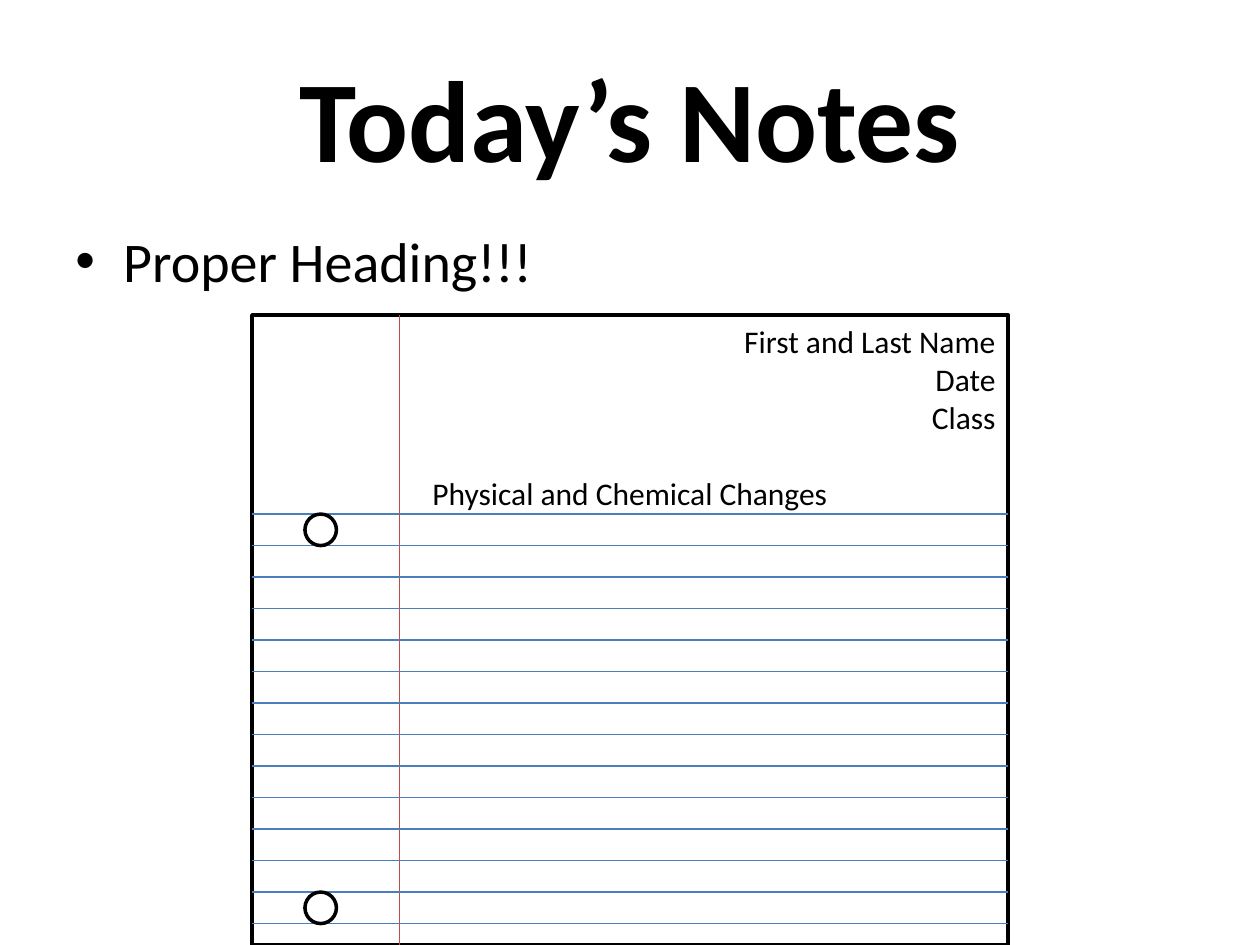
import pptx
import pptx.util
import pptx.dml.color
import pptx.enum.shapes
import pptx.enum.text
import pptx.oxml
import pptx.oxml.ns

Inches = pptx.util.Inches
Pt = pptx.util.Pt
Align = pptx.enum.text.PP_ALIGN
Anchor = pptx.enum.text.MSO_ANCHOR
Kind = pptx.enum.shapes.MSO_SHAPE


def paint(fill, color):
    fill.solid()
    fill.fore_color.rgb = pptx.dml.color.RGBColor.from_string(color)


def write(frame, text, size=18, bold=False, align=Align.LEFT, before=0):
    """Fill the first paragraph if it is empty, or else add one."""
    para = frame.paragraphs[-1]
    if para.runs:
        para = frame.add_paragraph()
    para.alignment = align
    para.space_before = Pt(before)
    run = para.add_run()
    run.text = text
    run.font.name = "Calibri"
    run.font.size = Pt(size)
    run.font.bold = bold
    paint(run.font.fill, "000000")
    return para


deck = pptx.Presentation()
deck.slide_width = Inches(10)
deck.slide_height = Inches(7.5)
slide = deck.slides.add_slide(deck.slide_layouts[6])
shapes = slide.shapes
paint(slide.background.fill, "FFFFFF")

# Title
title = shapes.add_textbox(Inches(0.5), Inches(0.3), Inches(9), Inches(1.25)).text_frame
title.word_wrap = True
title.vertical_anchor = Anchor.MIDDLE
write(title, "Today’s Notes", size=66, bold=True, align=Align.CENTER)

# Bullet
body = shapes.add_textbox(Inches(0.5), Inches(1.75), Inches(9), Inches(4.95)).text_frame
body.word_wrap = True
point = write(body, "Proper Heading!!!", size=32, before=6.4)
props = point._p.get_or_add_pPr()
props.set("marL", str(Inches(0.38)))
props.set("indent", str(Inches(-0.38)))
font = pptx.oxml.ns.qn("a:buFont")
mark = pptx.oxml.ns.qn("a:buChar")
props.append(props.makeelement(font, {"typeface": "Arial"}))
props.append(props.makeelement(mark, {"char": "•"}))

# Sheet of paper
left, right, top, end = 2, 8, 2.5, 7.5
first, gap, count = 4.08, 0.25, 14
page = shapes.add_shape(
    Kind.RECTANGLE, Inches(left), Inches(top), Inches(right - left), Inches(end - top)
)
head = page.text_frame
head.word_wrap = True
head.vertical_anchor = Anchor.TOP
head.margin_top = Inches(0.06)
for text in ("First and Last Name", "Date", "Class"):
    write(head, text, align=Align.RIGHT)
write(head, "Physical and Chemical Changes", align=Align.CENTER, before=22)

# Blue rules and red margin
rules = [(left, first + gap * row, right, first + gap * row, "4B7EBC") for row in range(count)]
rules.insert(1, (3.17, top, 3.17, end, "BF4C48"))
for x1, y1, x2, y2, color in rules:
    rule = shapes.add_connector(
        pptx.enum.shapes.MSO_CONNECTOR.STRAIGHT, Inches(x1), Inches(y1), Inches(x2), Inches(y2)
    )
    rule.line.width = Pt(0.75)
    paint(rule.line.fill, color)
    pptx.oxml.ns.qn("a:effectLst")
    rule._element.spPr.append(rule._element.makeelement(pptx.oxml.ns.qn("a:effectLst"), {}))

# Punched holes, on the first and last rows
holes = [
    shapes.add_shape(Kind.OVAL, Inches(2.42), Inches(first + gap * row), Inches(gap), Inches(gap))
    for row in (0, count - 2)
]
for shape in [page] + holes:
    shape.shadow.inherit = False
    paint(shape.fill, "FFFFFF")
    paint(shape.line.fill, "000000")
    shape.line.width = Pt(2)

deck.save("out.pptx")
